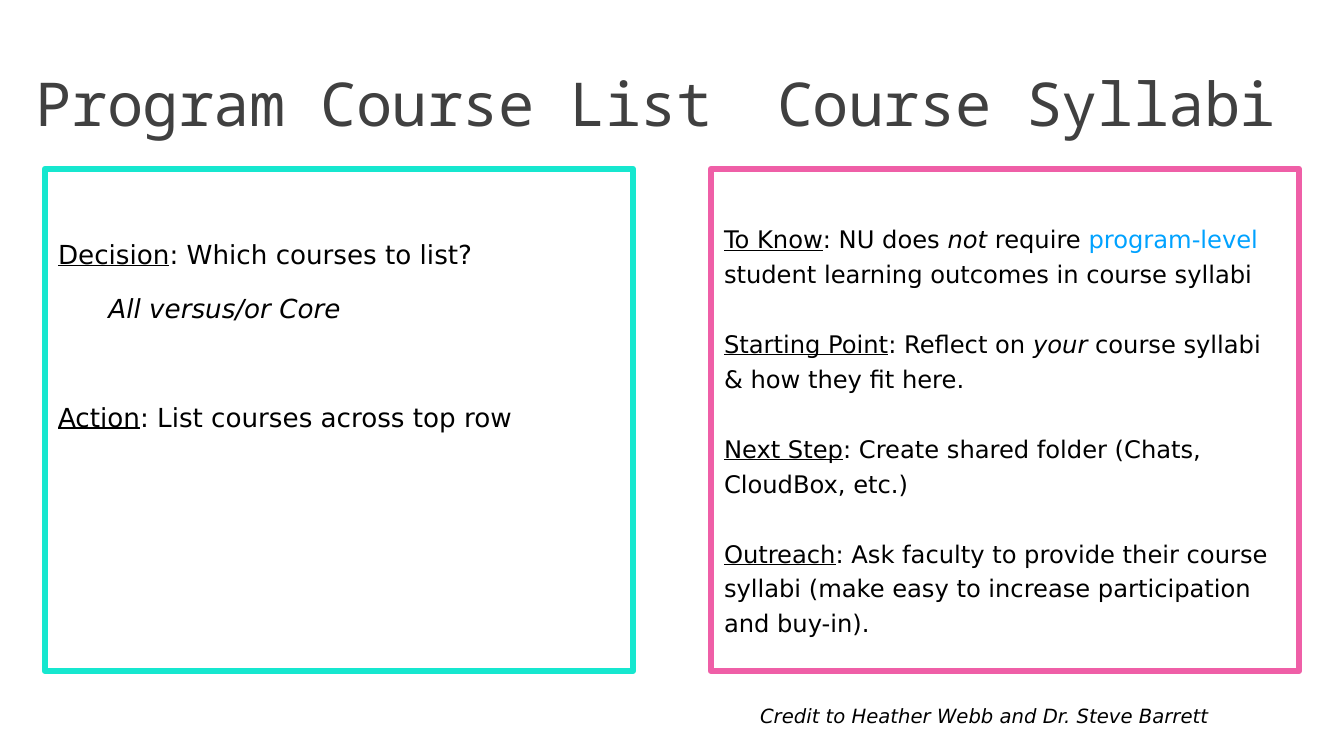
"""Build a slide with two framed columns: program course list and course syllabi."""
from pptx import Presentation
from pptx.dml.color import RGBColor as Rgb
from pptx.enum.shapes import MSO_SHAPE as Kind
from pptx.enum.text import MSO_ANCHOR as Anchor, PP_ALIGN as Align
from pptx.oxml.ns import qn
from pptx.util import Pt
from lxml.etree import SubElement as Sub

WHITE = Rgb(0xFF, 0xFF, 0xFF)
BLACK = Rgb(0, 0, 0)
GREY = Rgb(0x40, 0x40, 0x40)
TEAL = Rgb(0x16, 0xE7, 0xCF)
PINK = Rgb(0xEF, 0x5F, 0xA7)
BLUE = Rgb(0x00, 0xA2, 0xFF)
SANS, MONO = "DejaVu Sans", "Noto Sans Mono"

UNDER, SLANT = {"underline": True}, {"italic": True}
TITLE = [(0, [("Program Course List\t Course Syllabi", {})])]
LIST = [
    (0, [("Decision", UNDER), (": Which courses to list?", {})]),
    (23, [("\t", {}), ("All versus/or Core", SLANT)]),
    (77, [("Action", UNDER), (": List courses across top row", {})]),
]
SYLLABI = [
    (0, [("To Know", UNDER), (": NU does ", {}), ("not ", SLANT), ("require ", {}),
         ("program-level", {"color": BLUE}),
         (" student learning outcomes in course syllabi", {})]),
    (35, [("Starting Point", UNDER), (": Reflect on ", {}), ("your", SLANT),
          (" course syllabi & how they fit here.", {})]),
    (35, [("Next Step", UNDER), (": Create shared folder (Chats, CloudBox, etc.)", {})]),
    (35, [("Outreach", UNDER),
          (": Ask faculty to provide their course syllabi "
           "(make easy to increase participation and buy-in).", {})]),
]
CREDIT = [(0, [("Credit to Heather Webb and Dr. Steve Barrett", SLANT)])]

FRAMES = [
    (LIST, TEAL, 69, 1.0, {"size": Pt(18.7)}),
    (SYLLABI, PINK, 50, 1.2, {"size": Pt(17.3)}),
]
LEFT, TOP, WIDE, HIGH, STEP = 45, 169, 588, 502, 666
PAD = 13


def px(n):
    return round(n * 914400 / 100.8)


def write(shape, paras, pads, lead, base):
    frame = shape.text_frame
    sides = ("left", "top", "right", "bottom")
    form = {"margin_" + side: px(pad) for side, pad in zip(sides, pads)}
    form.update(word_wrap=True, vertical_anchor=Anchor.TOP)
    for key, val in form.items():
        setattr(frame, key, val)
    for i, (gap, runs) in enumerate(paras):
        para = frame.add_paragraph() if i else frame.paragraphs[0]
        look = {"alignment": Align.LEFT, "line_spacing": lead, "space_before": px(gap)}
        for key, val in look.items():
            setattr(para, key, val)
        for text, extra in runs:
            run = para.add_run()
            run.text = text
            style = {"name": SANS, "color": BLACK, **base, **extra}
            run.font.color.rgb = style.pop("color")
            for key, val in style.items():
                setattr(run.font, key, val)


def label(slide, box, *args):
    shape = slide.shapes.add_textbox(*map(px, box))
    write(shape, *args)
    return shape


def main():
    deck = Presentation()
    deck.slide_width, deck.slide_height = px(1344), px(756)
    slide = deck.slides.add_slide(deck.slide_layouts[6])

    title = label(slide, (23, 65, 1275, 85), TITLE, (PAD, 9, PAD, 0), 0.9,
                  {"name": MONO, "size": Pt(43.2), "color": GREY})
    for run in title.text_frame.paragraphs[0].runs:
        run.font._element.set("spc", "-50")

    for i, (paras, color, top, lead, base) in enumerate(FRAMES):
        box = (LEFT + i * STEP, TOP, WIDE, HIGH)
        frame = slide.shapes.add_shape(Kind.RECTANGLE, *map(px, box))
        frame.shadow.inherit = False
        frame.fill.solid()
        frame.fill.fore_color.rgb = WHITE
        frame.line.color.rgb = color
        frame.line.width = Pt(4.5)
        Sub(frame.line._get_or_add_ln(), qn("a:round"))
        write(frame, paras, (PAD, top, PAD, PAD), lead, base)

    label(slide, (750, 699, 495, 34), CREDIT, (10, 5, 10, 5), 1.0, {"size": Pt(14)})
    deck.save("out.pptx")


if __name__ == "__main__":
    main()
